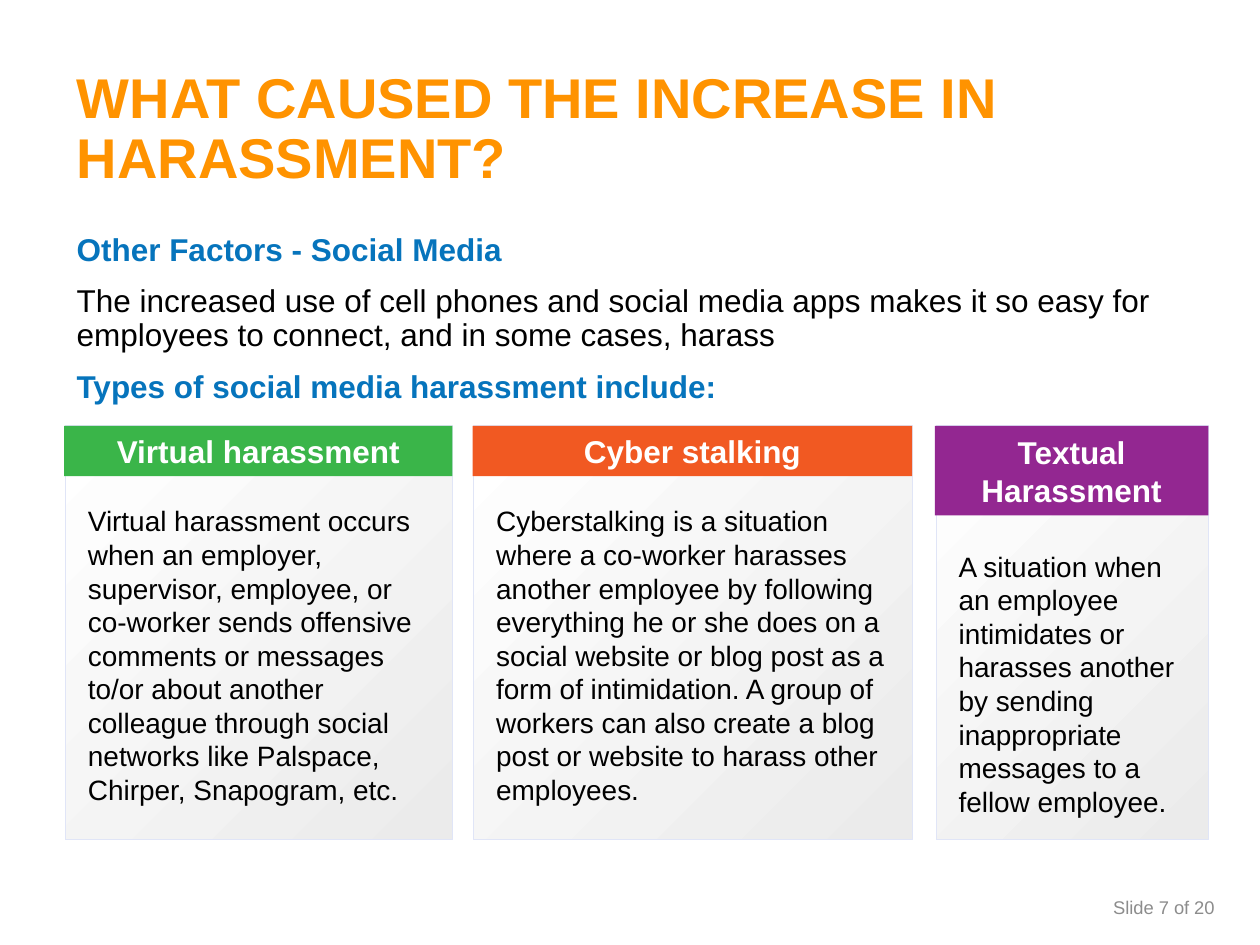
from dataclasses import dataclass

from pptx import Presentation
from pptx.dml.color import RGBColor
from pptx.enum.shapes import MSO_SHAPE
from pptx.enum.text import MSO_ANCHOR, MSO_AUTO_SIZE, PP_ALIGN
from pptx.util import Inches, Pt

RECTANGLE = MSO_SHAPE.RECTANGLE
LEFT, CENTER, RIGHT = PP_ALIGN.LEFT, PP_ALIGN.CENTER, PP_ALIGN.RIGHT
TOP, MIDDLE = MSO_ANCHOR.TOP, MSO_ANCHOR.MIDDLE
NO_AUTOFIT = MSO_AUTO_SIZE.NONE
TITLE_ONLY = 5


@dataclass(frozen=True)
class Theme:
    """Colours, font and type sizes of the slide."""
    font: str = "Arial"
    title: str = "FF9300"
    heading: str = "0674BC"
    ink: str = "000000"
    white: str = "FFFFFF"
    footer: str = "8C8C8C"
    panel_dark: str = "EBEBEB"
    panel_line: str = "E0E5F7"
    green: str = "3AB549"
    orange: str = "F15922"
    purple: str = "932791"
    title_size: float = 32
    lead_size: float = 18
    card_size: float = 16
    footer_size: float = 10.5


THEME = Theme()
CARD_TOP, CARD_HEIGHT = 3.38, 3.28

INTRO = [
    ("Other Factors - Social Media", True),
    ("The increased use of cell phones and social media apps makes it so easy "
     "for employees to connect, and in some cases, harass", False),
    ("Types of social media harassment include:", True),
]

CARDS = [
    (0.51, 3.08, 0.4, 3.95, 2.96, THEME.green, "Virtual harassment",
     "Virtual harassment occurs when an employer, supervisor, employee, or "
     "co-worker sends offensive comments or messages to/or about another "
     "colleague through social networks like Palspace, Chirper, Snapogram, etc."),
    (3.75, 3.49, 0.4, 3.95, 3.3, THEME.orange, "Cyber stalking",
     "Cyberstalking is a situation where a co-worker harasses another employee "
     "by following everything he or she does on a social website or blog post "
     "as a form of intimidation. A group of workers can also create a blog post "
     "or website to harass other employees."),
    (7.42, 2.17, 0.71, 4.31, 1.97, THEME.purple, "Textual Harassment",
     "A situation when an employee intimidates or harasses another by sending "
     "inappropriate messages to a fellow employee."),
]


def rgb(value):
    """Turn a hex string into a colour."""
    return RGBColor.from_string(value)


def place(shape, box):
    """Move a shape to a box given in inches."""
    shape.left, shape.top, shape.width, shape.height = map(Inches, box)


def prepare_frame(shape, anchor=TOP):
    """Make a shape's text wrap at a fixed size and return its frame."""
    frame = shape.text_frame
    frame.word_wrap = True
    frame.auto_size = NO_AUTOFIT
    frame.vertical_anchor = anchor
    return frame


def write(para, text, size=THEME.card_size, color=THEME.ink, bold=False,
          align=LEFT, line_spacing=1.0, space_before=0):
    """Write formatted text into a paragraph."""
    para.alignment = align
    para.line_spacing = line_spacing
    para.space_before = Pt(space_before)
    span = para.add_run()
    span.text = text
    span.font.name = THEME.font
    span.font.size = Pt(size)
    span.font.bold = bold
    span.font.color.rgb = rgb(color)


def add_text(page, box, text, anchor=TOP, **style):
    """Add a text box holding one paragraph."""
    shape = page.shapes.add_textbox(*map(Inches, box))
    write(prepare_frame(shape, anchor).paragraphs[0], text, **style)


def add_rectangle(page, box):
    """Add a rectangle without shadow."""
    shape = page.shapes.add_shape(RECTANGLE, *map(Inches, box))
    shape.shadow.inherit = False
    return shape


def fill_title(page, box):
    """Place and write the slide title."""
    title = page.shapes.title
    place(title, box)
    write(prepare_frame(title, MIDDLE).paragraphs[0],
          "WHAT CAUSED THE INCREASE IN HARASSMENT?", size=THEME.title_size,
          color=THEME.title, bold=True, line_spacing=0.9)


def add_intro(page, box):
    """Add the lead text with its blue headings."""
    frame = prepare_frame(page.shapes.add_textbox(*map(Inches, box)))
    for index, (text, is_heading) in enumerate(INTRO):
        para = frame.add_paragraph() if index else frame.paragraphs[0]
        write(para, text, size=THEME.lead_size, bold=is_heading,
              color=THEME.heading if is_heading else THEME.ink,
              line_spacing=0.9, space_before=10 if index else 0)


def add_card(page, box, header_height, text_top, text_width, color, heading, text):
    """Add a shaded panel with its text and coloured header."""
    left, top, width, height = box
    panel = add_rectangle(page, (left + 0.01, top, width - 0.01, height))
    panel.fill.gradient()
    panel.fill.gradient_angle = 135
    stops = panel.fill.gradient_stops
    for stop, position, shade in zip(stops, (0, 1), (THEME.panel_dark, THEME.white)):
        stop.position = position
        stop.color.rgb = rgb(shade)
    panel.line.color.rgb = rgb(THEME.panel_line)
    panel.line.width = Pt(0.5)

    text_box = (left + 0.09, text_top, text_width, top + height - text_top)
    add_text(page, text_box, text)

    header = add_rectangle(page, (left, top, width, header_height))
    header.fill.solid()
    header.fill.fore_color.rgb = rgb(color)
    header.line.fill.background()
    write(prepare_frame(header, MIDDLE).paragraphs[0], heading,
          size=THEME.lead_size, color=THEME.white, bold=True, align=CENTER)


def main():
    """Build the slide and save it."""
    deck = Presentation()
    deck.slide_width, deck.slide_height = Inches(10), Inches(7.5)
    page = deck.slides.add_slide(deck.slide_layouts[TITLE_ONLY])
    fill_title(page, (0.51, 0.26, 9.04, 1.55))
    add_intro(page, (0.51, 1.81, 9.11, 1.5))
    for left, width, *content in CARDS:
        add_card(page, (left, CARD_TOP, width, CARD_HEIGHT), *content)
    add_text(page, (6.26, 7, 3.48, 0.4), "Slide 7 of 20", anchor=MIDDLE,
             size=THEME.footer_size, color=THEME.footer, align=RIGHT)
    deck.save("out.pptx")


if __name__ == "__main__":
    main()
